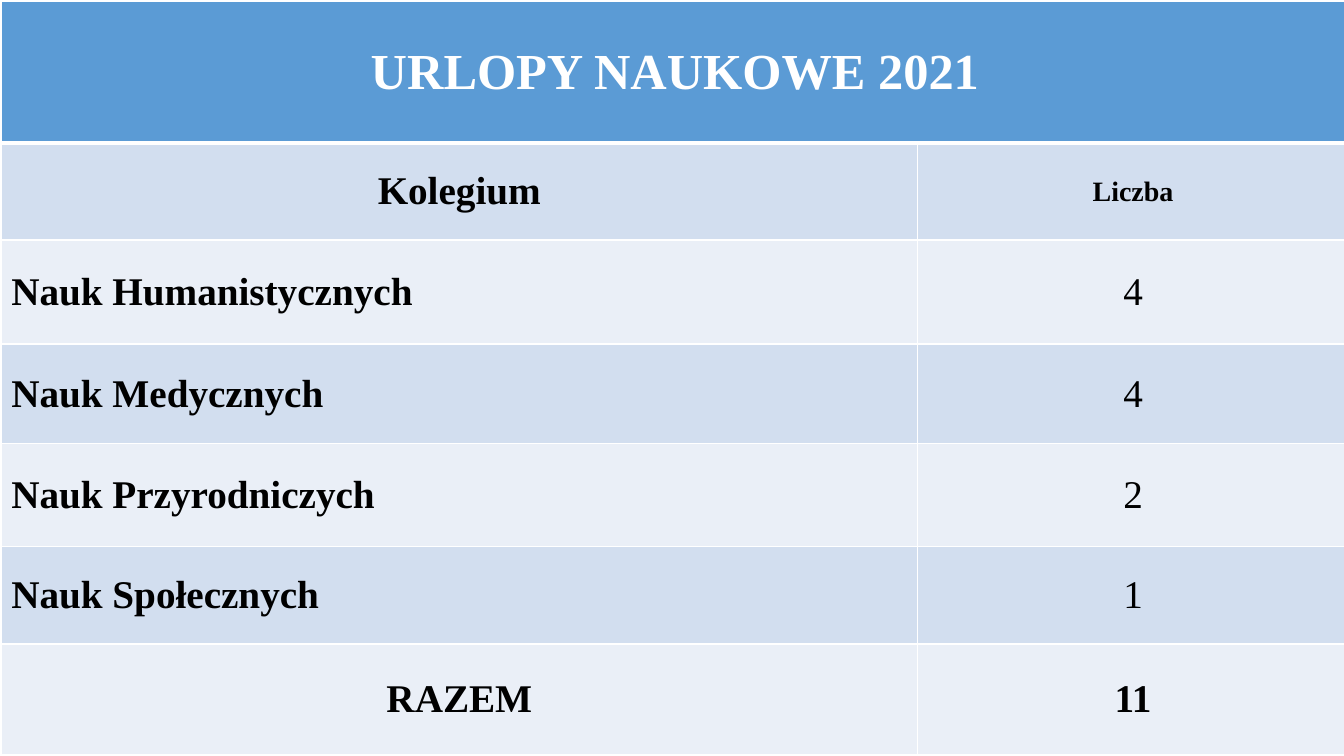
"""Builds a slide with the table of research leaves granted in 2021."""
from lxml import etree
from pptx import Presentation
from pptx import util as u
from pptx.dml.color import RGBColor
from pptx.enum import text
from pptx.oxml import ns

COLOURS = {"header": "5B9BD5", "odd": "D2DEEF", "even": "EAEFF7",
           "white": "FFFFFF", "black": "000000"}
COLUMN_WIDTHS = [23.09, 10.87]
ROW_HEIGHTS = [3.58, 2.44, 2.62, 2.51, 2.59, 2.46, 2.79]
COLLEGES = [("Nauk Humanistycznych", 4), ("Nauk Medycznych", 4),
            ("Nauk Przyrodniczych", 2), ("Nauk Społecznych", 1)]


class SlideBuilder:
    """Holds the style and the current slide."""

    def __init__(self, deck, font="Times New Roman"):
        self.page = deck.slides.add_slide(deck.slide_layouts[6])
        self.font = font

    def table(self, left, top, widths, heights):
        """Add an empty table with the given column widths and row heights."""
        frame = self.page.shapes.add_table(
            len(heights), len(widths), u.Cm(left), u.Cm(top),
            u.Cm(sum(widths)), u.Cm(sum(heights)))
        for column, width in zip(frame.table.columns, widths):
            column.width = u.Cm(width)
        for row, height in zip(frame.table.rows, heights):
            row.height = u.Cm(height)
        return frame.table

    def borders(self, cell, top=1, bottom=1):
        """Draw white borders around a cell, with widths in points."""
        properties = cell._tc.get_or_add_tcPr()
        for side, width in (("L", 1), ("R", 1), ("T", top), ("B", bottom)):
            line = etree.SubElement(properties, ns.qn(f"a:ln{side}"), w=str(u.Pt(width)))
            fill = etree.SubElement(line, ns.qn("a:solidFill"))
            etree.SubElement(fill, ns.qn("a:srgbClr"), val=COLOURS["white"])

    def cell(self, cell, words, fill, size=28, bold=True, centred=True, colour="black"):
        """Fill a cell and write one paragraph in it."""
        cell.fill.solid()
        cell.fill.fore_color.rgb = RGBColor.from_string(COLOURS[fill])
        cell.vertical_anchor = text.MSO_ANCHOR.MIDDLE
        cell.text = words
        para = cell.text_frame.paragraphs[0]
        para.alignment = text.PP_ALIGN.CENTER if centred else text.PP_ALIGN.LEFT
        para.font.name = self.font
        para.font.size = u.Pt(size)
        para.font.bold = bold
        para.font.color.rgb = RGBColor.from_string(COLOURS[colour])


def main():
    """Build and save the deck."""
    deck = Presentation()
    deck.slide_width, deck.slide_height = u.Cm(33.87), u.Cm(19.05)
    builder = SlideBuilder(deck)
    leaves = builder.table(0.03, 0.03, COLUMN_WIDTHS, ROW_HEIGHTS)

    for row in range(len(ROW_HEIGHTS)):
        for column in range(len(COLUMN_WIDTHS)):
            builder.borders(leaves.cell(row, column), top=3 if row == 1 else 1,
                            bottom=3 if row == 0 else 1)

    heading = leaves.cell(0, 0)
    heading.merge(leaves.cell(0, 1))
    builder.cell(heading, "URLOPY NAUKOWE 2021", "header", size=36, colour="white")

    total = sum(count for college, count in COLLEGES)
    rows = [("Kolegium", "Liczba"), *COLLEGES, ("RAZEM", total)]
    for number, (name, count) in enumerate(rows, start=1):
        fill = "odd" if number % 2 else "even"
        is_college = (name, count) in COLLEGES
        builder.cell(leaves.cell(number, 0), name, fill, centred=not is_college)
        builder.cell(leaves.cell(number, 1), str(count), fill,
                     size=20 if number == 1 else 28, bold=not is_college)

    deck.save("out.pptx")


if __name__ == "__main__":
    main()
